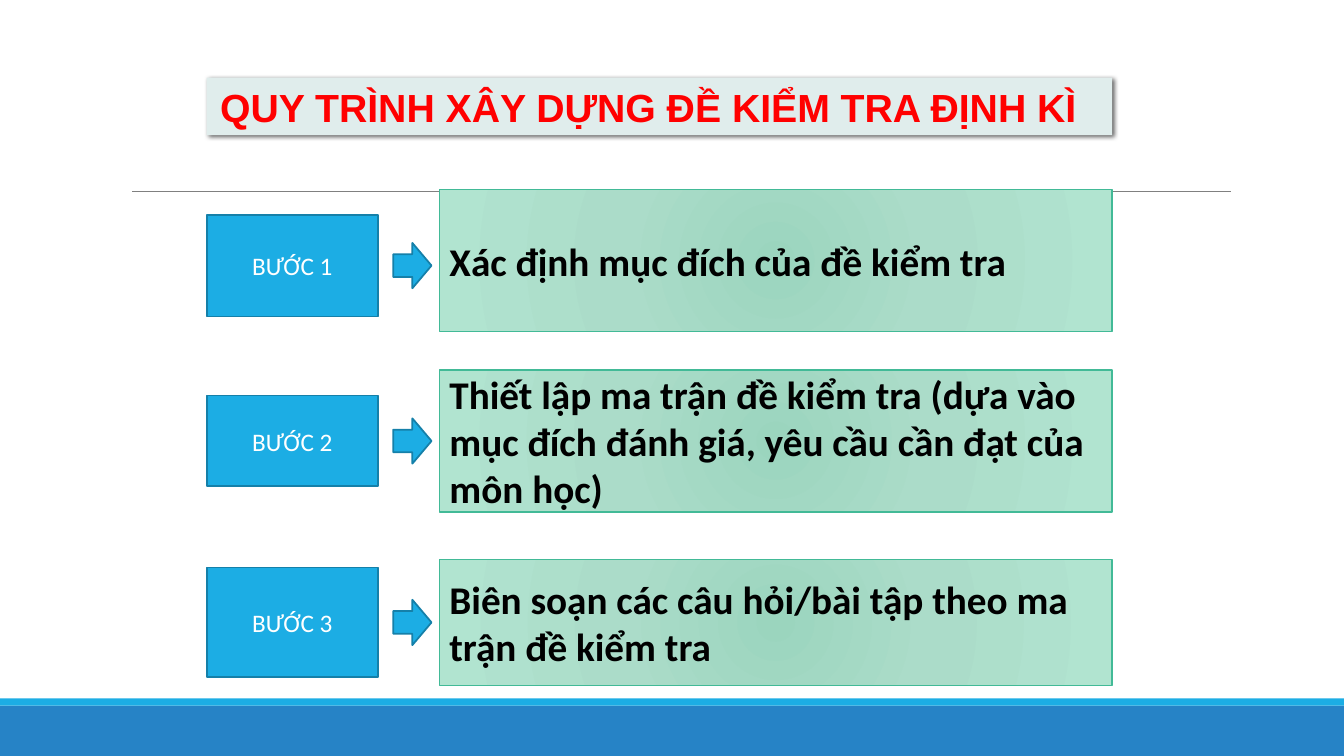
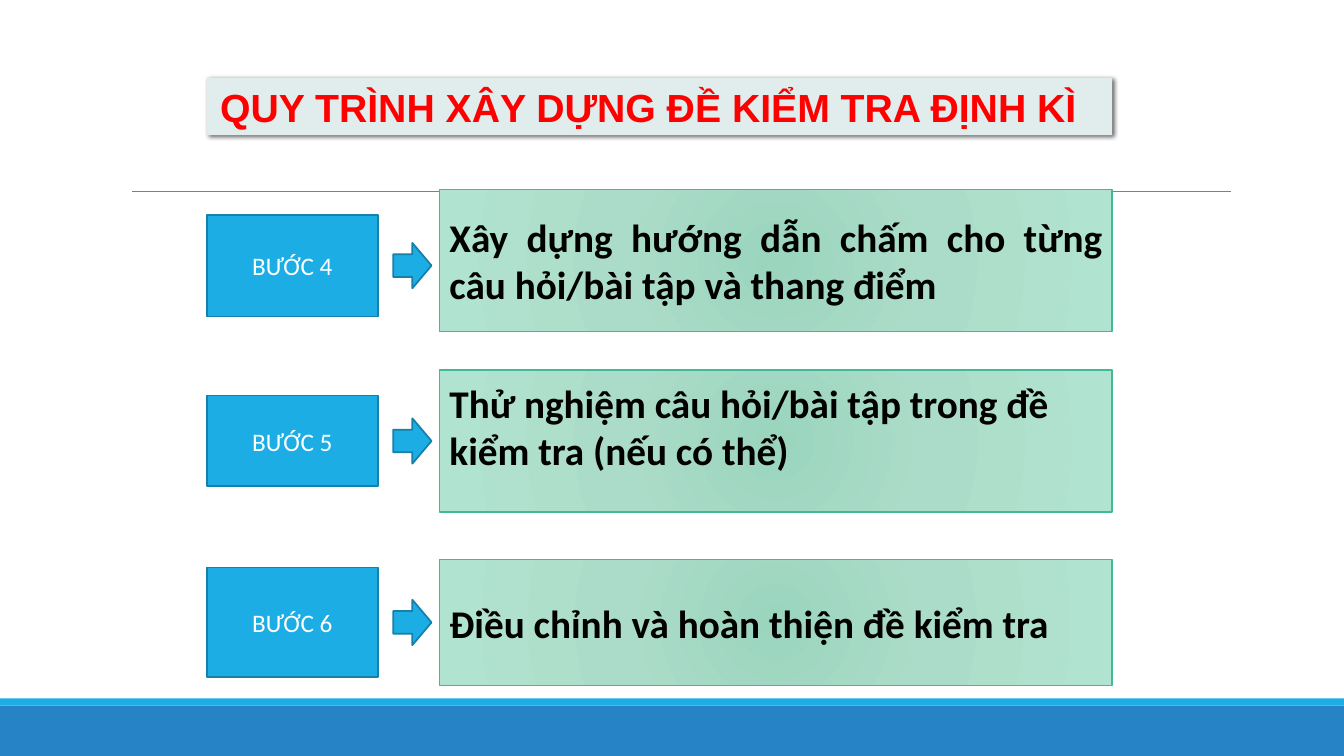
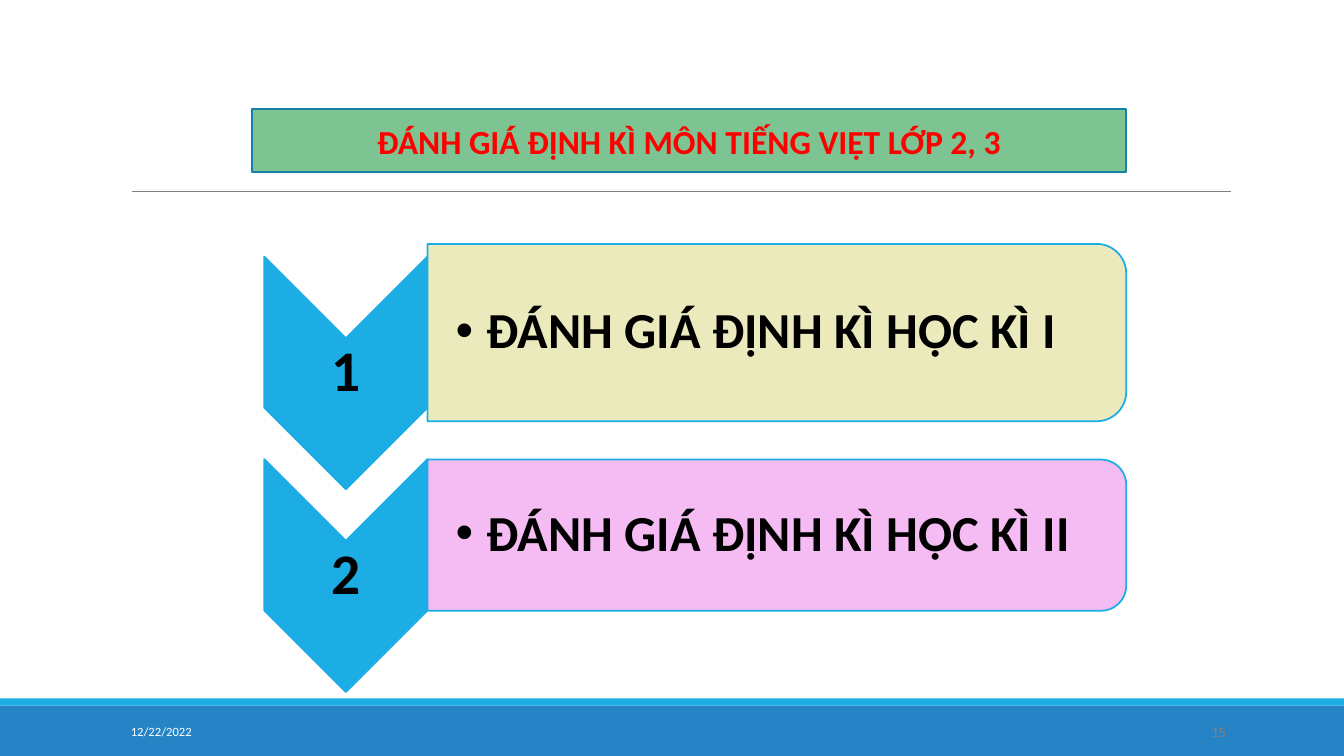
from dataclasses import dataclass

from pptx import Presentation
from pptx.dml.color import RGBColor
from pptx.enum.shapes import MSO_CONNECTOR, MSO_SHAPE as Shape
from pptx.enum.text import MSO_ANCHOR as Anchor, MSO_AUTO_SIZE as AutoSize, PP_ALIGN as Align
from pptx.oxml import parse_xml
from pptx.oxml.ns import nsdecls, qn
from pptx.util import Inches, Pt


@dataclass(frozen=True)
class Theme:
    blue: str = "1CADE4"
    deep_blue: str = "2683C6"
    outline: str = "1580A9"
    rule: str = "808080"
    red: str = "FF0000"
    black: str = "000000"
    white: str = "FFFFFF"
    pale: str = "E0EDEC"
    green: str = "7EC492"
    card_line: str = "42BA97"
    card_stops: tuple = ((0, "9BD5BE"), (45, "ABDCC9"), (100, "B1E4D0"))
    body_font: str = "Calibri"
    title_font: str = "Arial"
    title: int = 28
    term_title: int = 24
    label: int = 18
    card: int = 28
    number: int = 41
    term: int = 36
    date: int = 9
    page: float = 10.5


@dataclass(frozen=True)
class Row:
    top: float
    height: float
    label_height: float
    drop: float = 0


@dataclass(frozen=True)
class Step:
    text: str
    align: Align = Align.LEFT
    lift: float = 0


THEME = Theme()
WIDTH, HEIGHT = 13.33, 7.5
LEFT, RIGHT = 2.05, 11.03
LABEL_WIDTH, CARD_LEFT = 1.7, 4.36
ARROW_LEFT, ARROW_WIDTH, ARROW_HEIGHT = 3.9, 0.38, 0.45
ROWS = (Row(1.88, 1.41, 1.01, 0.05), Row(3.67, 1.41, 0.9), Row(5.55, 1.25, 1.09))

PROCESS_TITLE = "QUY TRÌNH XÂY DỰNG ĐỀ KIỂM TRA ĐỊNH KÌ"
STEPS = (
    Step("Xác định mục đích của đề kiểm tra"),
    Step("Thiết lập ma trận đề kiểm tra (dựa vào mục đích đánh giá, "
         "yêu cầu cần đạt của môn học)"),
    Step("Biên soạn các câu hỏi/bài tập theo ma trận đề kiểm tra"),
    Step("Xây dựng hướng dẫn chấm cho từng câu hỏi/bài tập và thang điểm", Align.JUSTIFY),
    Step("Thử nghiệm câu hỏi/bài tập trong đề kiểm tra (nếu có thể)", lift=0.3),
    Step("Điều chỉnh và hoàn thiện đề kiểm tra"),
)
TERMS_TITLE = "ĐÁNH GIÁ ĐỊNH KÌ MÔN TIẾNG VIỆT LỚP 2, 3"
TERMS = (("ĐÁNH GIÁ ĐỊNH KÌ HỌC KÌ I", "E9E8B6", 1.76),
         ("ĐÁNH GIÁ ĐỊNH KÌ HỌC KÌ II", "F5B5F2", 1.5))


def paint(item, color):
    item.fill.solid()
    item.fill.fore_color.rgb = RGBColor.from_string(color)


def outline(item, color, width=1.25):
    item.line.color.rgb = RGBColor.from_string(color)
    item.line.width = Pt(width)


def move(item, left, top, width, height):
    item.left, item.top = Inches(left), Inches(top)
    item.width, item.height = Inches(width), Inches(height)


def add_block(slide, kind, box, color, line=None):
    block = slide.shapes.add_shape(kind, *map(Inches, box))
    block.shadow.inherit = False
    paint(block, color)
    if line:
        outline(block, line)
    else:
        block.line.fill.background()
    return block


def add_turned(slide, kind, box, color):
    """Add a shape turned clockwise by a quarter that fills the box as seen."""
    left, top, width, height = box
    shift = (width - height) / 2
    block = add_block(slide, kind, (left + shift, top - shift, height, width), color, THEME.blue)
    block.rotation = 90
    return block


def write(item, text, size, color, bold=False, align=Align.CENTER,
          font=THEME.body_font, insets=(0.1, 0.05, 0.1, 0.05), spacing=None):
    frame = item.text_frame
    frame.word_wrap = True
    frame.auto_size = AutoSize.NONE
    frame.vertical_anchor = Anchor.MIDDLE
    (frame.margin_left, frame.margin_top,
     frame.margin_right, frame.margin_bottom) = map(Inches, insets)
    paragraph = frame.paragraphs[0]
    paragraph.alignment = align
    paragraph.space_before = Pt(0)
    if spacing:
        paragraph.line_spacing = spacing
    run = paragraph.add_run()
    run.text = text
    run.font.name, run.font.size, run.font.bold = font, Pt(size), bold
    run.font.color.rgb = RGBColor.from_string(color)
    return paragraph


def add_text(slide, box, *content, **style):
    return write(slide.shapes.add_textbox(*map(Inches, box)), *content, **style)


def fill_radial(item, stops):
    marks = "".join(f'<a:gs pos="{place * 1000}"><a:srgbClr val="{color}"/></a:gs>'
                    for place, color in stops)
    item.fill.background()
    properties = item.element.spPr
    properties.replace(properties.find(qn("a:noFill")), parse_xml(
        f'<a:gradFill {nsdecls("a")} rotWithShape="1"><a:gsLst>{marks}</a:gsLst>'
        '<a:path path="circle"><a:fillToRect l="100000" t="100000" r="100000" b="100000"/>'
        '</a:path></a:gradFill>'))


def add_shadow(item):
    item.element.spPr.append(parse_xml(
        f'<a:effectLst {nsdecls("a")}><a:outerShdw blurRad="{Pt(3.5)}" dist="{Pt(2)}" '
        'dir="2700000" algn="tl" rotWithShape="0"><a:srgbClr val="000000">'
        '<a:alpha val="60000"/></a:srgbClr></a:outerShdw></a:effectLst>'))


def round_corners(placeholder):
    placeholder.element.spPr.find(qn("a:xfrm")).addnext(parse_xml(
        f'<a:prstGeom {nsdecls("a")} prst="roundRect"><a:avLst/></a:prstGeom>'))


def set_master(prs, slide):
    """Draw the bands and the rule on a slide, then hand them to the master."""
    rule = slide.shapes.add_connector(
        MSO_CONNECTOR.STRAIGHT, *map(Inches, (1.31, 1.9, 12.21, 1.9)))
    outline(rule, THEME.rule, 0.5)
    rule.element.spPr.append(parse_xml(f'<a:effectLst {nsdecls("a")}/>'))
    parts = (add_block(slide, Shape.RECTANGLE, (0, 7, WIDTH, 0.5), THEME.deep_blue),
             add_block(slide, Shape.RECTANGLE, (0, 6.93, WIDTH, 0.07), THEME.blue),
             rule)
    for number, part in enumerate(parts, 101):
        part.element.xpath(".//p:cNvPr")[0].set("id", str(number))
        prs.slide_master.element.cSld.spTree.append(part.element)


def add_step(slide, row, number, step):
    middle = row.top + row.height / 2
    label_middle = middle + row.drop
    label = add_block(slide, Shape.RECTANGLE,
                      (LEFT, label_middle - row.label_height / 2, LABEL_WIDTH, row.label_height),
                      THEME.blue, THEME.outline)
    write(label, f"BƯỚC {number}", THEME.label, THEME.white)
    card = add_block(slide, Shape.RECTANGLE,
                     (CARD_LEFT, row.top, RIGHT - CARD_LEFT, row.height), THEME.pale)
    fill_radial(card, THEME.card_stops)
    outline(card, THEME.card_line, 1)
    write(card, step.text, THEME.card, THEME.black, True, step.align,
          insets=(0.1, 0.05, 0.1, 0.05 + step.lift))
    add_block(slide, Shape.RIGHT_ARROW,
              (ARROW_LEFT, label_middle - ARROW_HEIGHT / 2, ARROW_WIDTH, ARROW_HEIGHT),
              THEME.blue, THEME.outline)


def add_process_slide(prs, first):
    slide = prs.slides.add_slide(prs.slide_layouts[5])
    title = slide.shapes.title
    move(title, LEFT, 0.77, RIGHT - LEFT, 0.57)
    paint(title, THEME.pale)
    add_shadow(title)
    write(title, PROCESS_TITLE, THEME.title, THEME.red, True, font=THEME.title_font,
          insets=(0.08, 0.05, 0.3, 0.05))
    for number, row in enumerate(ROWS, first):
        add_step(slide, row, number, STEPS[number - 1])
    return slide


def add_term(slide, body, middle, number, text, color, height):
    chevron_left, panel_left, panel_right = 2.62, 4.24, 11.17
    chevron_width, chevron_height = panel_left - chevron_left, 2.31
    chevron_middle = middle + 0.4
    add_turned(slide, Shape.CHEVRON,
               (chevron_left, chevron_middle - chevron_height / 2, chevron_width, chevron_height),
               THEME.blue)
    add_text(slide, (chevron_left, chevron_middle - 0.35, chevron_width, 0.7),
             str(number), THEME.number, THEME.black, True, insets=(0.03,) * 4, spacing=0.9)
    panel = add_turned(slide, Shape.ROUND_2_SAME_RECTANGLE,
                       (panel_left, middle - height / 2, panel_right - panel_left, height), color)
    panel.element.spPr.find(qn("a:solidFill"))[0].append(
        parse_xml(f'<a:alpha {nsdecls("a")} val="90000"/>'))
    move(body, panel_left, middle - height / 2 + 0.08, 6.85, height - 0.16)
    item = write(body, text, THEME.term, THEME.black, True, Align.LEFT,
                 insets=(0.28, 0.03, 0.03, 0.03), spacing=0.9)
    indent = Inches(0.31)
    item._p.get_or_add_pPr().set("marL", str(indent))
    item._p.get_or_add_pPr().set("indent", str(-indent))
    panel.element.addnext(body.element)


def add_terms_slide(prs):
    slide = prs.slides.add_slide(prs.slide_layouts[3])
    title, *bodies = slide.placeholders
    move(title, 2.5, 1.08, 8.67, 0.63)
    round_corners(title)
    paint(title, THEME.green)
    outline(title, THEME.outline)
    write(title, TERMS_TITLE, THEME.term_title, THEME.red, True)
    for index, (body, term) in enumerate(zip(bodies, TERMS)):
        add_term(slide, body, 3.3 + 2.01 * index, index + 1, *term)
    add_text(slide, (1.2, 7.06, 2.7, 0.4), "12/22/2022", THEME.date, THEME.white,
             align=Align.LEFT)
    add_text(slide, (10.9, 7.06, 1.36, 0.4), "15", THEME.page, THEME.rule, align=Align.RIGHT)


def main():
    prs = Presentation()
    prs.slide_width, prs.slide_height = Inches(WIDTH), Inches(HEIGHT)
    opening = add_process_slide(prs, 1)
    set_master(prs, opening)
    add_process_slide(prs, 4)
    add_terms_slide(prs)
    prs.save("out.pptx")


if __name__ == "__main__":
    main()
